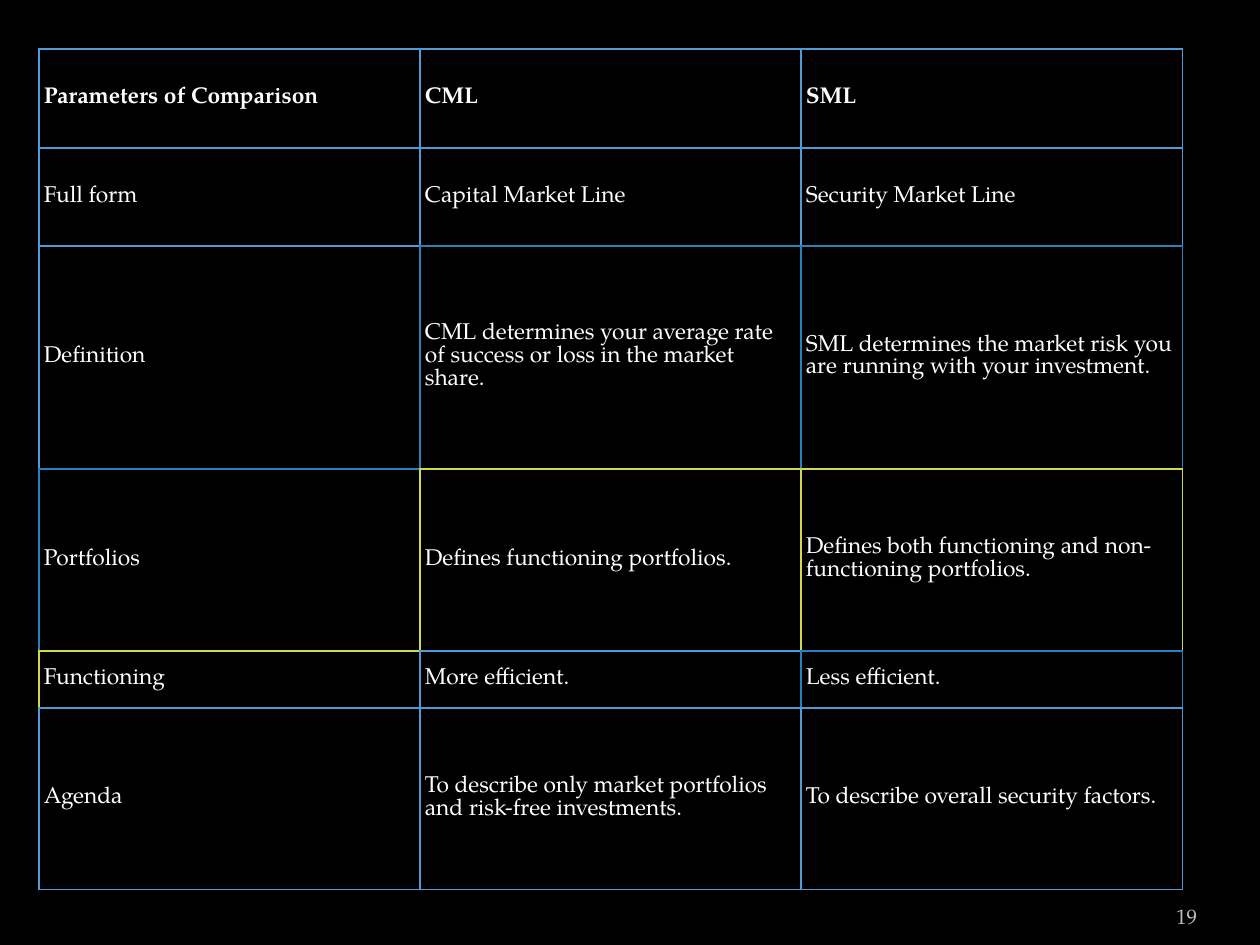
"""Build a slide with a table that compares the CML with the SML."""
from lxml import etree
from pptx import Presentation
from pptx.dml.color import RGBColor
from pptx.enum.text import MSO_ANCHOR, PP_ALIGN
from pptx.oxml.ns import qn
from pptx.util import Pt

PX = 914400 // 126
FONT = "TeX Gyre Pagella"
BLACK = RGBColor(0x00, 0x00, 0x00)
WHITE = RGBColor(0xFF, 0xFF, 0xFF)
GREY = RGBColor(0xBD, 0xBD, 0xBD)
BLUE = RGBColor(0x50, 0x9A, 0xD5)
DEEP = RGBColor(0x28, 0x81, 0xBD)
LIME = RGBColor(0xD0, 0xDA, 0x48)
MIDDLE, BOTTOM = MSO_ANCHOR.MIDDLE, MSO_ANCHOR.BOTTOM
LEFT, RIGHT = PP_ALIGN.LEFT, PP_ALIGN.RIGHT

COL = 381
ROWS = [
    (99, ["Parameters of Comparison", "CML", "SML"], [BLUE, BLUE, BLUE]),
    (98, ["Full form", "Capital Market Line", "Security Market Line"],
     [BLUE, BLUE, BLUE]),
    (223, ["Definition",
           "CML determines your average rate of success or loss in the market share.",
           "SML determines the market risk you are running with your investment."],
     [BLUE, DEEP, DEEP]),
    (182, ["Portfolios", "Defines functioning portfolios.",
           "Defines both functioning and non-functioning portfolios."],
     [DEEP, LIME, LIME]),
    (57, ["Functioning", "More efficient.", "Less efficient."],
     [LIME, BLUE, DEEP]),
    (182, ["Agenda", "To describe only market portfolios and risk-free investments.",
           "To describe overall security factors."],
     [BLUE, BLUE, BLUE]),
]


def write(frame, text, size=13, color=WHITE, bold=False, align=LEFT):
    para = frame.paragraphs[0]
    para.alignment = align
    para.line_spacing = Pt(size)
    run = para.add_run()
    run.text = text
    run.font.name = FONT
    run.font.size = Pt(size)
    run.font.bold = bold
    run.font.color.rgb = color


def add_edge(cell, side, color, width):
    props = cell._tc.get_or_add_tcPr()
    line = etree.SubElement(props, qn(f"a:ln{side}"), w=str(Pt(width)))
    fill = etree.SubElement(line, qn("a:solidFill"))
    etree.SubElement(fill, qn("a:srgbClr"), val=str(color))


deck = Presentation()
deck.slide_width, deck.slide_height = 1260 * PX, 945 * PX
slide = deck.slides.add_slide(deck.slide_layouts[6])
back = slide.background.fill
back.solid()
back.fore_color.rgb = BLACK

box = slide.shapes.add_textbox(1092 * PX, 885 * PX, 105 * PX, 50 * PX)
frame = box.text_frame
frame.word_wrap = True
frame.vertical_anchor = BOTTOM
frame.margin_left = frame.margin_right = 0
write(frame, "19", size=12, color=GREY, align=RIGHT)

high = sum(row[0] for row in ROWS)
table = slide.shapes.add_table(
    len(ROWS), 3, 39 * PX, 49 * PX, 3 * COL * PX, high * PX).table
table.horz_banding = False
for column in table.columns:
    column.width = COL * PX

for r, (height, texts, hues) in enumerate(ROWS):
    table.rows[r].height = height * PX
    for c, (text, hue) in enumerate(zip(texts, hues)):
        cell = table.cell(r, c)
        cell.vertical_anchor = MIDDLE
        cell.margin_left = cell.margin_right = 5 * PX
        cell.margin_top = cell.margin_bottom = 5 * PX
        write(cell.text_frame, text, bold=r == 0)
        last, end = c == 2, r == len(ROWS) - 1
        add_edge(cell, "L", hue, 1)
        add_edge(cell, "R", hue if last else hues[c + 1], 0.5 if last else 1)
        add_edge(cell, "T", hue, 1)
        add_edge(cell, "B", hue if end else ROWS[r + 1][2][c], 0.5 if end else 1)
        cell.fill.background()

deck.save("out.pptx")
